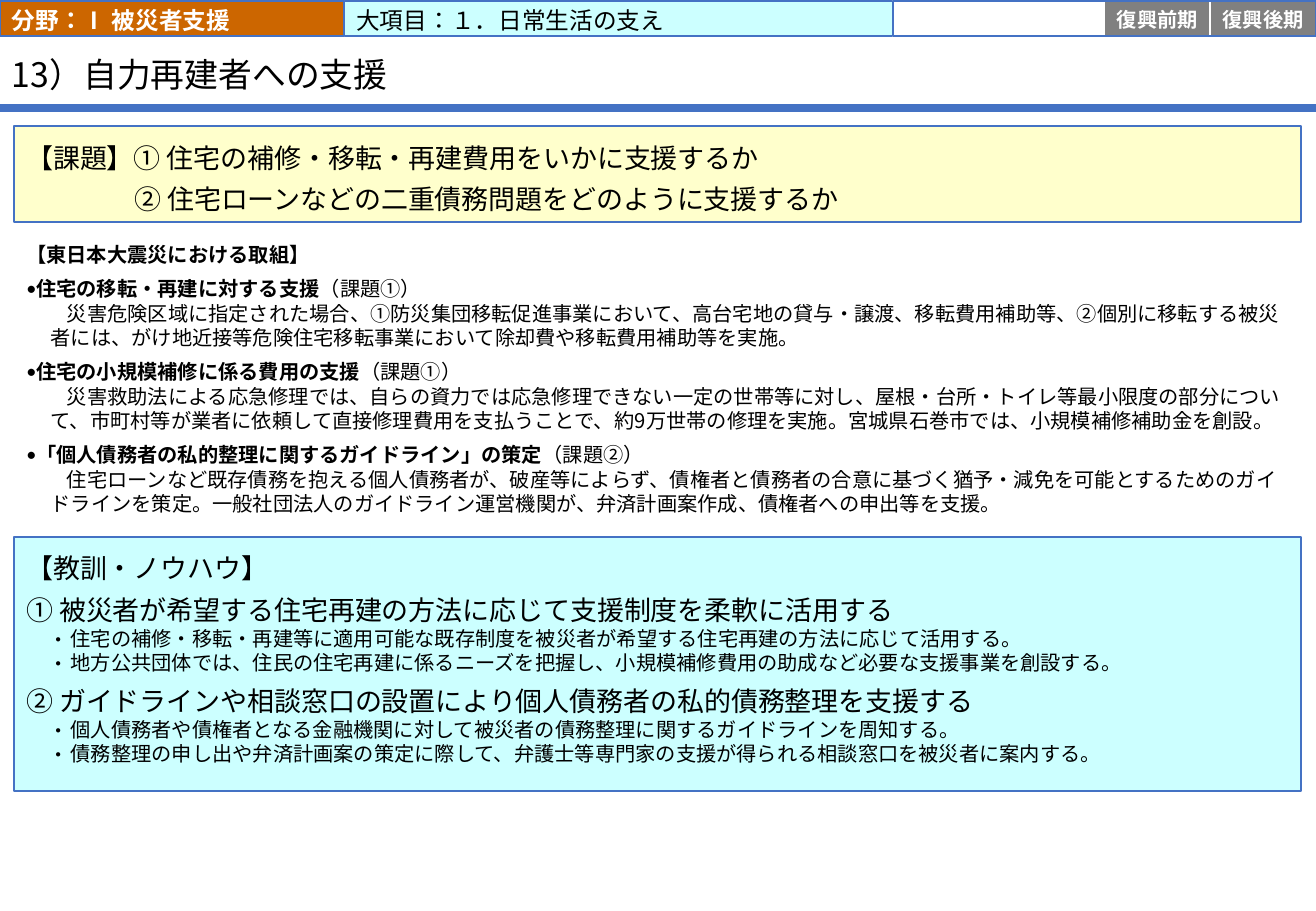
from lxml import etree
from pptx import Presentation
from pptx.dml.color import RGBColor
from pptx.enum.lang import MSO_LANGUAGE_ID
from pptx.enum.shapes import MSO_CONNECTOR, MSO_SHAPE
from pptx.enum.text import MSO_ANCHOR, PP_ALIGN
from pptx.oxml.ns import qn
from pptx.util import Cm, Pt

RECTANGLE = MSO_SHAPE.RECTANGLE
STRAIGHT = MSO_CONNECTOR.STRAIGHT
TOP, MIDDLE = MSO_ANCHOR.TOP, MSO_ANCHOR.MIDDLE
LEFT, CENTER = PP_ALIGN.LEFT, PP_ALIGN.CENTER
JAPANESE = MSO_LANGUAGE_ID.JAPANESE

CALIBRI, NOTO = "Calibri", "Noto Sans CJK JP"
BLUE, ORANGE, CYAN, YELLOW = "4472C4", "CC6600", "CCFFFF", "FFFFCC"
GREY, WHITE, BLACK = "808080", "FFFFFF", "000000"

TITLE = "13）自力再建者への支援"
FIELD = "分野：Ⅰ 被災者支援"
CATEGORY = "大項目：１．日常生活の支え"
STAGES = ["", "", "復興前期", "復興後期"]

# Each paragraph: style name, text, optional plain ending
ISSUES = [
    ("issue", "【課題】① 住宅の補修・移転・再建費用をいかに支援するか"),
    ("next issue", "② 住宅ローンなどの二重債務問題をどのように支援するか"),
]
EFFORTS = [
    ("effort title", "【東日本大震災における取組】"),
    ("effort", "住宅の移転・再建に対する支援", "（課題①）"),
    ("detail", "災害危険区域に指定された場合、①防災集団移転促進事業において、高台宅地の貸与・譲渡、"
               "移転費用補助等、②個別に移転する被災者には、がけ地近接等危険住宅移転事業において"
               "除却費や移転費用補助等を実施。"),
    ("effort", "住宅の小規模補修に係る費用の支援", "（課題①）"),
    ("detail", "災害救助法による応急修理では、自らの資力では応急修理できない一定の世帯等に対し、"
               "屋根・台所・トイレ等最小限度の部分について、市町村等が業者に依頼して直接修理費用を"
               "支払うことで、約9万世帯の修理を実施。宮城県石巻市では、小規模補修補助金を創設。"),
    ("effort", "「個人債務者の私的整理に関するガイドライン」の策定", "（課題②）"),
    ("detail", "住宅ローンなど既存債務を抱える個人債務者が、破産等によらず、債権者と債務者の合意に"
               "基づく猶予・減免を可能とするためのガイドラインを策定。一般社団法人のガイドライン"
               "運営機関が、弁済計画案作成、債権者への申出等を支援。"),
]
LESSONS = [
    ("lesson title", "【教訓・ノウハウ】"),
    ("lesson", "① 被災者が希望する住宅再建の方法に応じて支援制度を柔軟に活用する"),
    ("point", "住宅の補修・移転・再建等に適用可能な既存制度を被災者が希望する住宅再建の方法に応じて活用する。"),
    ("point", "地方公共団体では、住民の住宅再建に係るニーズを把握し、小規模補修費用の助成など必要な支援事業を創設する。"),
    ("lesson", "② ガイドラインや相談窓口の設置により個人債務者の私的債務整理を支援する"),
    ("point", "個人債務者や債権者となる金融機関に対して被災者の債務整理に関するガイドラインを周知する。"),
    ("point", "債務整理の申し出や弁済計画案の策定に際して、弁護士等専門家の支援が得られる相談窓口を被災者に案内する。"),
]

STYLES = {
    "title": dict(size=20, spacing=0.9),
    "field": dict(size=14, font=CALIBRI, bold=True, color=WHITE),
    "category": dict(size=14, font=CALIBRI),
    "stage": dict(size=12, font=CALIBRI, bold=True, color=WHITE, align=CENTER),
    "issue": dict(size=16, spacing=Pt(24)),
    "next issue": dict(size=16, spacing=Pt(24), margin=2.26),
    "effort title": dict(size=12, font=CALIBRI, bold=True),
    "effort": dict(size=12, font=CALIBRI, bold=True, before=6, margin=0.16, indent=-0.16, bullet="•"),
    "detail": dict(size=12, margin=0.51, indent=0.34),
    "lesson title": dict(size=16),
    "lesson": dict(size=16, before=6),
    "point": dict(size=12, margin=0.93, indent=-0.47, bullet="・"),
}

SLIDE_WIDTH, SLIDE_HEIGHT = 27.51, 19.05
HEADER_TOP, HEADER_HEIGHT = 0.02, 0.74
BOX_LEFT, BOX_WIDTH = 0.3, 26.9
STAGE_LEFT, STAGE_WIDTH = 18.67, 2.21
RULE_Y = 2.26
HEADER_INSETS = (0.25, 0.05, 0.25, 0)


def rgb(value):
    return RGBColor.from_string(value)


def format_paragraph(para, size, font=NOTO, bold=False, color=BLACK, align=LEFT,
                     spacing=1.0, before=0, margin=0, indent=0, bullet=None):
    para.alignment = align
    para.line_spacing = spacing
    para.space_before = Pt(before)
    properties = para._p.get_or_add_pPr()
    properties.set("marL", str(Cm(margin)))
    properties.set("indent", str(Cm(indent)))
    if bullet:
        etree.SubElement(properties, qn("a:buFont")).set("typeface", font)
        etree.SubElement(properties, qn("a:buChar")).set("char", bullet)
    for position, span in enumerate(para.runs):
        span.font.size = Pt(size)
        span.font.bold = bold and position == 0
        span.font.color.rgb = rgb(color)
        span.font.name = font
        span.font.language_id = JAPANESE
        etree.SubElement(span.font._element, qn("a:ea")).set("typeface", NOTO)


def write(box, lines, insets, anchor=MIDDLE):
    frame = box.text_frame
    frame.word_wrap = True
    frame.vertical_anchor = anchor
    (frame.margin_left, frame.margin_top,
     frame.margin_right, frame.margin_bottom) = map(Cm, insets)
    for position, (style, text, *endings) in enumerate(lines):
        para = frame.add_paragraph() if position else frame.paragraphs[0]
        para.text = text
        for ending in endings:
            para.add_run().text = ending
        format_paragraph(para, **STYLES[style])


def add_box(shapes, left, top, width, height, fill=None, line=None):
    box = shapes.add_shape(RECTANGLE, Cm(left), Cm(top), Cm(width), Cm(height))
    box.shadow.inherit = False
    if fill:
        box.fill.solid()
        box.fill.fore_color.rgb = rgb(fill)
    else:
        box.fill.background()
    if line:
        box.line.color.rgb = rgb(line)
        box.line.width = Pt(1)
    else:
        box.line.fill.background()
    return box


def add_header_cell(shapes, left, width, fill, line):
    return add_box(shapes, left, HEADER_TOP, width, HEADER_HEIGHT, fill, line)


def main():
    deck = Presentation()
    deck.slide_width, deck.slide_height = Cm(SLIDE_WIDTH), Cm(SLIDE_HEIGHT)
    page = deck.slides.add_slide(deck.slide_layouts[5])
    shapes = page.shapes

    rule = shapes.add_connector(STRAIGHT, 0, Cm(RULE_Y), Cm(SLIDE_WIDTH), Cm(RULE_Y))
    rule.line.color.rgb = rgb(BLUE)
    rule.line.width = Pt(4.5)
    etree.SubElement(rule._element.spPr, qn("a:effectLst"))

    title = shapes.title
    title.left, title.top, title.width, title.height = Cm(0), Cm(0.81), Cm(24.08), Cm(1.47)
    write(title, [("title", TITLE)], (0.25, 0.1, 0.25, 0))

    efforts = add_box(shapes, BOX_LEFT, 4.85, BOX_WIDTH, 6.15, WHITE)
    write(efforts, EFFORTS, (0.25, 0.13, 0.25, 0.13))
    issues = add_box(shapes, BOX_LEFT, 2.64, BOX_WIDTH, 2.01, YELLOW, BLUE)
    write(issues, ISSUES, (0.25, 0.3, 0.25, 0.3))
    lessons = add_box(shapes, BOX_LEFT, 11.23, BOX_WIDTH, 5.31, CYAN, BLUE)
    write(lessons, LESSONS, (0.25, 0.3, 0.25, 0), TOP)

    field = add_header_cell(shapes, 0, 7.2, ORANGE, BLUE)
    write(field, [("field", FIELD)], HEADER_INSETS)
    category = add_header_cell(shapes, 7.2, 11.51, CYAN, BLUE)
    write(category, [("category", CATEGORY)], HEADER_INSETS)

    stages = shapes.add_group_shape().shapes
    for position, stage in enumerate(STAGES):
        left = STAGE_LEFT + position * STAGE_WIDTH
        cell = add_header_cell(stages, left, STAGE_WIDTH, GREY if stage else WHITE, WHITE)
        if stage:
            write(cell, [("stage", stage)], (0, 0.05, 0, 0))
    add_header_cell(stages, STAGE_LEFT, len(STAGES) * STAGE_WIDTH, None, BLUE)

    deck.save("out.pptx")


if __name__ == "__main__":
    main()
